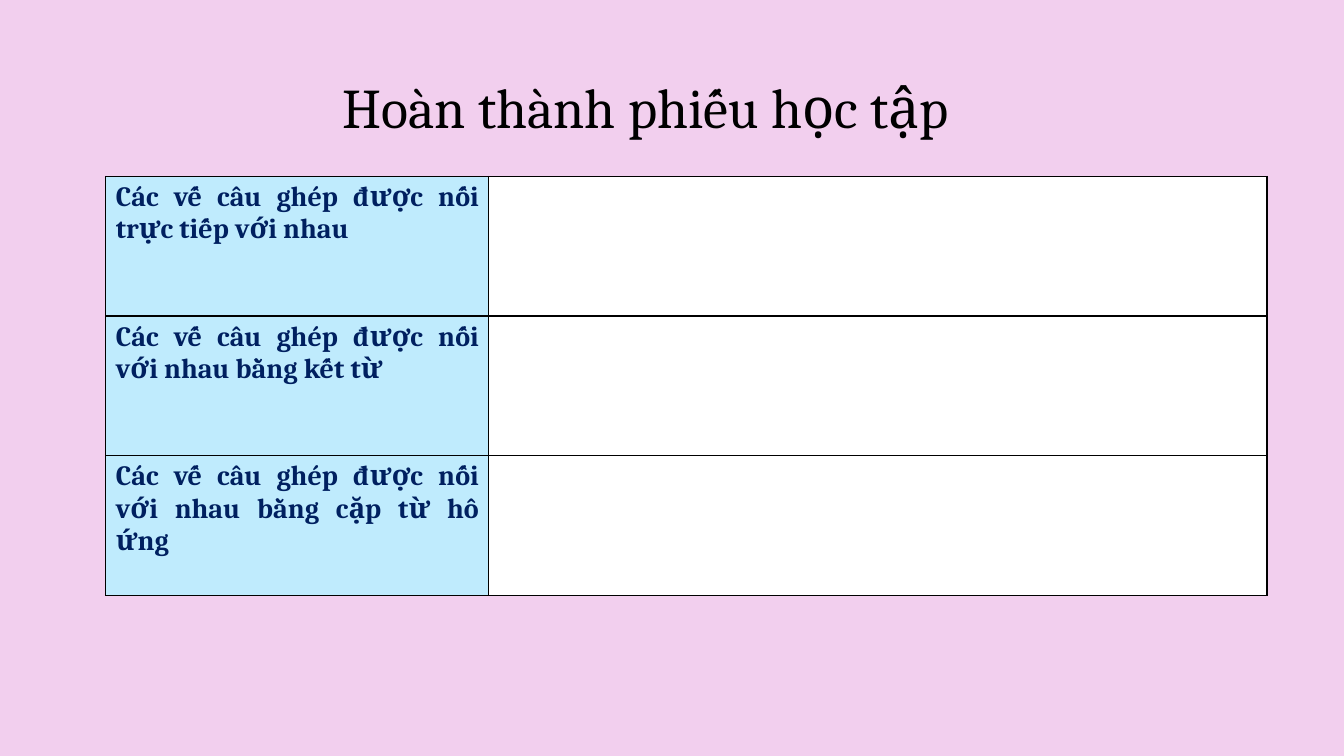
from lxml import etree
from pptx import Presentation
from pptx.dml.color import RGBColor
from pptx.enum import text
from pptx.oxml import ns
from pptx.util import Pt

COLORS = {
    "background": "F2CFEE",
    "title": "000000",
    "border": "000000",
    "prompt": "002060",
    "prompt_fill": "BFEBFD",
    "answer_fill": "FFFFFF",
}
FONT = "Cambria"
PROMPTS = [
    "Các vế câu ghép được nối trực tiếp với nhau",
    "Các vế câu ghép được nối với nhau bằng kết từ",
    "Các vế câu ghép được nối với nhau bằng cặp từ hô ứng",
]
COLUMN_WIDTHS = [273.6, 555.84]
ROW_HEIGHT = 99.7


def rgb(name):
    return RGBColor.from_string(COLORS[name])


def write(frame, wording, size, color, bold=False, align=None):
    paragraph = frame.paragraphs[0]
    paragraph.alignment = align
    run = paragraph.add_run()
    run.text = wording
    run.font.name = FONT
    run.font.size = Pt(size)
    run.font.bold = bold
    run.font.color.rgb = rgb(color)


def add_title(slide, wording):
    title = slide.shapes.add_textbox(Pt(237.6), Pt(48.24), Pt(509), Pt(55.44))
    title.text_frame.word_wrap = True
    write(title.text_frame, wording, 40, "title")


def style_cell(cell, fill):
    """Draw thin borders on all four sides, then fill the cell."""
    properties = cell._tc.get_or_add_tcPr()
    for side in ("a:lnL", "a:lnR", "a:lnT", "a:lnB"):
        line = etree.SubElement(properties, ns.qn(side), w=str(Pt(1)))
        solid = etree.SubElement(line, ns.qn("a:solidFill"))
        etree.SubElement(solid, ns.qn("a:srgbClr"), val=COLORS["border"])
    cell.fill.solid()
    cell.fill.fore_color.rgb = rgb(fill)


def add_worksheet(slide, prompts):
    worksheet = slide.shapes.add_table(
        len(prompts), len(COLUMN_WIDTHS), Pt(75.6), Pt(126),
        Pt(sum(COLUMN_WIDTHS)), Pt(ROW_HEIGHT * len(prompts))).table
    worksheet.first_row = False
    worksheet.horz_banding = False
    for column, width in zip(worksheet.columns, COLUMN_WIDTHS):
        column.width = Pt(width)
    for row, prompt in zip(worksheet.rows, prompts):
        row.height = Pt(ROW_HEIGHT)
        prompt_cell, answer_cell = row.cells
        style_cell(prompt_cell, "prompt_fill")
        style_cell(answer_cell, "answer_fill")
        write(prompt_cell.text_frame, prompt, 20, "prompt", bold=True,
              align=text.PP_ALIGN.JUSTIFY)


def main():
    deck = Presentation()
    deck.slide_width, deck.slide_height = Pt(960), Pt(540)
    slide = deck.slides.add_slide(deck.slide_layouts[6])
    slide.background.fill.solid()
    slide.background.fill.fore_color.rgb = rgb("background")
    add_title(slide, "Hoàn thành phiếu học tập")
    add_worksheet(slide, PROMPTS)
    deck.save("out.pptx")


if __name__ == "__main__":
    main()
